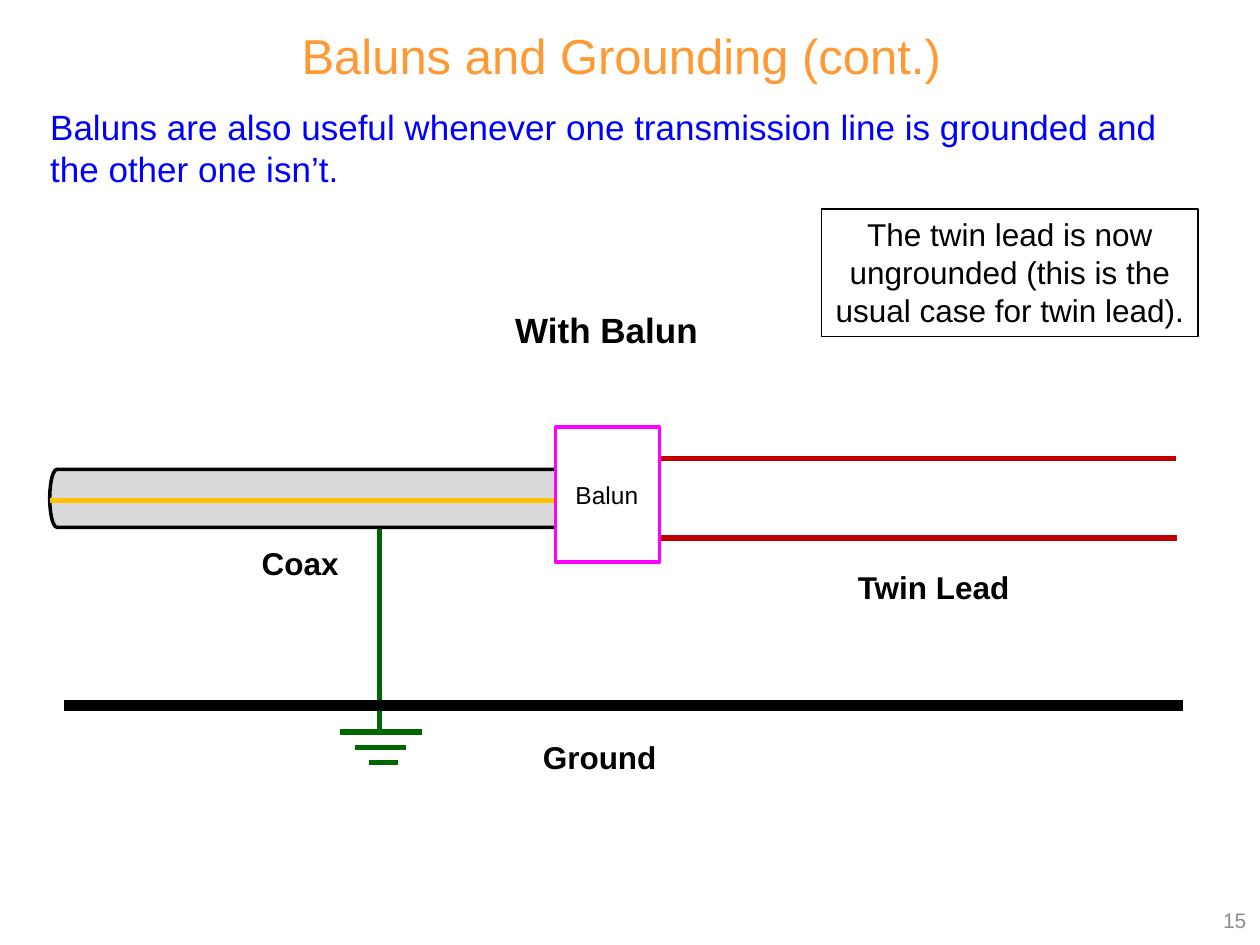
from pptx import Presentation
from pptx.dml.color import RGBColor
from pptx.enum.shapes import MSO_CONNECTOR, MSO_SHAPE
from pptx.enum.text import MSO_ANCHOR, PP_ALIGN
from pptx.oxml.ns import qn
from pptx.util import Pt
from lxml.etree import SubElement

COLORS = {
    "title": "FF9933", "intro": "0000FF", "text": "000000", "number": "8C8C8C",
    "earth": "006600", "shield": "D9D9D9", "core": "FFC000", "lead": "C00000",
    "balun": "FF00FF", "paper": "FFFFFF", "outline": "000000",
}


def write_text(shape, text, size, color="text", bold=False, align=PP_ALIGN.LEFT,
               anchor=MSO_ANCHOR.TOP, wrap=True):
    frame = shape.text_frame
    frame.word_wrap = wrap
    frame.vertical_anchor = anchor
    frame.margin_left = frame.margin_right = Pt(7.2)
    frame.margin_top = frame.margin_bottom = Pt(3.6)
    para = frame.paragraphs[0]
    para.alignment = align
    span = para.add_run()
    span.text = text
    span.font.name = "Arial"
    span.font.size = Pt(size)
    span.font.bold = bold
    span.font.color.rgb = RGBColor.from_string(COLORS[color])


def add_line(x1, y1, x2, y2, color, width=3):
    line = page.shapes.add_connector(
        MSO_CONNECTOR.STRAIGHT, Pt(x1), Pt(y1), Pt(x2), Pt(y2))
    line.line.color.rgb = RGBColor.from_string(COLORS[color])
    line.line.width = Pt(width)
    SubElement(line._element.spPr, qn("a:effectLst"))


deck = Presentation()
deck.slide_width, deck.slide_height = Pt(720), Pt(540)
page = deck.slides.add_slide(deck.slide_layouts[5])

# Title
title = page.shapes.title
title.left, title.top, title.width, title.height = Pt(25.2), Pt(10.8), Pt(659.5), Pt(41)
write_text(title, "Baluns and Grounding (cont.)", 28, color="title", align=PP_ALIGN.CENTER)

# Introduction and slide number
intro = page.shapes.add_textbox(Pt(21.6), Pt(57), Pt(662.4), Pt(55.4))
write_text(intro, "Baluns are also useful whenever one transmission line is grounded "
           "and the other one isn’t.", 20, color="intro")
number = page.shapes.add_textbox(Pt(551.5), Pt(511.2), Pt(167.8), Pt(28.8))
write_text(number, "15", 12, color="number", align=PP_ALIGN.RIGHT, anchor=MSO_ANCHOR.MIDDLE)

# Earth connection: a drop wire and three shrinking bars
add_line(216.7, 271.4, 216.7, 419, "earth")
for left, right, y in [(194.4, 241.2, 418.3), (203, 231.8, 427), (211, 227.5, 435.6)]:
    add_line(left, y, right, y, "earth")

# Coax: a can lying on its side, with its inner conductor
coax = page.shapes.add_shape(MSO_SHAPE.CAN, Pt(162.7), Pt(133.9), Pt(33.1), Pt(301.7))
coax.rotation = 90
add_line(28.8, 285.8, 344.2, 285.8, "core")

# Twin lead and ground plane
for left, y in [(356.4, 262.1), (357.1, 307.4)]:
    add_line(left, y, left + 315.4, y, "lead")
add_line(36.7, 403.2, 676.1, 403.2, "outline", width=6)

# Balun and the note about the twin lead
balun = page.shapes.add_shape(MSO_SHAPE.RECTANGLE, Pt(317.5), Pt(244.1), Pt(59.4), Pt(77))
note = page.shapes.add_shape(MSO_SHAPE.RECTANGLE, Pt(469.4), Pt(119.5), Pt(215.3), Pt(72.7))
write_text(note, "The twin lead is now ungrounded (this is the usual case for twin lead).",
           18, align=PP_ALIGN.CENTER)

for shape, fill, outline, width in [(coax, "shield", "outline", 2),
                                    (balun, "paper", "balun", 2),
                                    (note, None, "outline", 0.75)]:
    shape.shadow.inherit = False
    if fill:
        shape.fill.solid()
        shape.fill.fore_color.rgb = RGBColor.from_string(COLORS[fill])
    else:
        shape.fill.background()
    shape.line.color.rgb = RGBColor.from_string(COLORS[outline])
    shape.line.width = Pt(width)

# Labels
for text, left, top, width, height, size, bold in [
    ("With Balun", 287.3, 172.8, 119.5, 31.5, 20, True),
    ("Coax", 142.4, 307.4, 59, 29.1, 18, True),
    ("Twin Lead", 483.1, 321.1, 102.2, 29.1, 18, True),
    ("Ground", 303.1, 418.3, 79.9, 29.1, 18, True),
    ("Balun", 321.8, 270.7, 50.4, 24.2, 14, False),
]:
    label = page.shapes.add_textbox(Pt(left), Pt(top), Pt(width), Pt(height))
    write_text(label, text, size, bold=bold, wrap=False)

deck.save("out.pptx")
